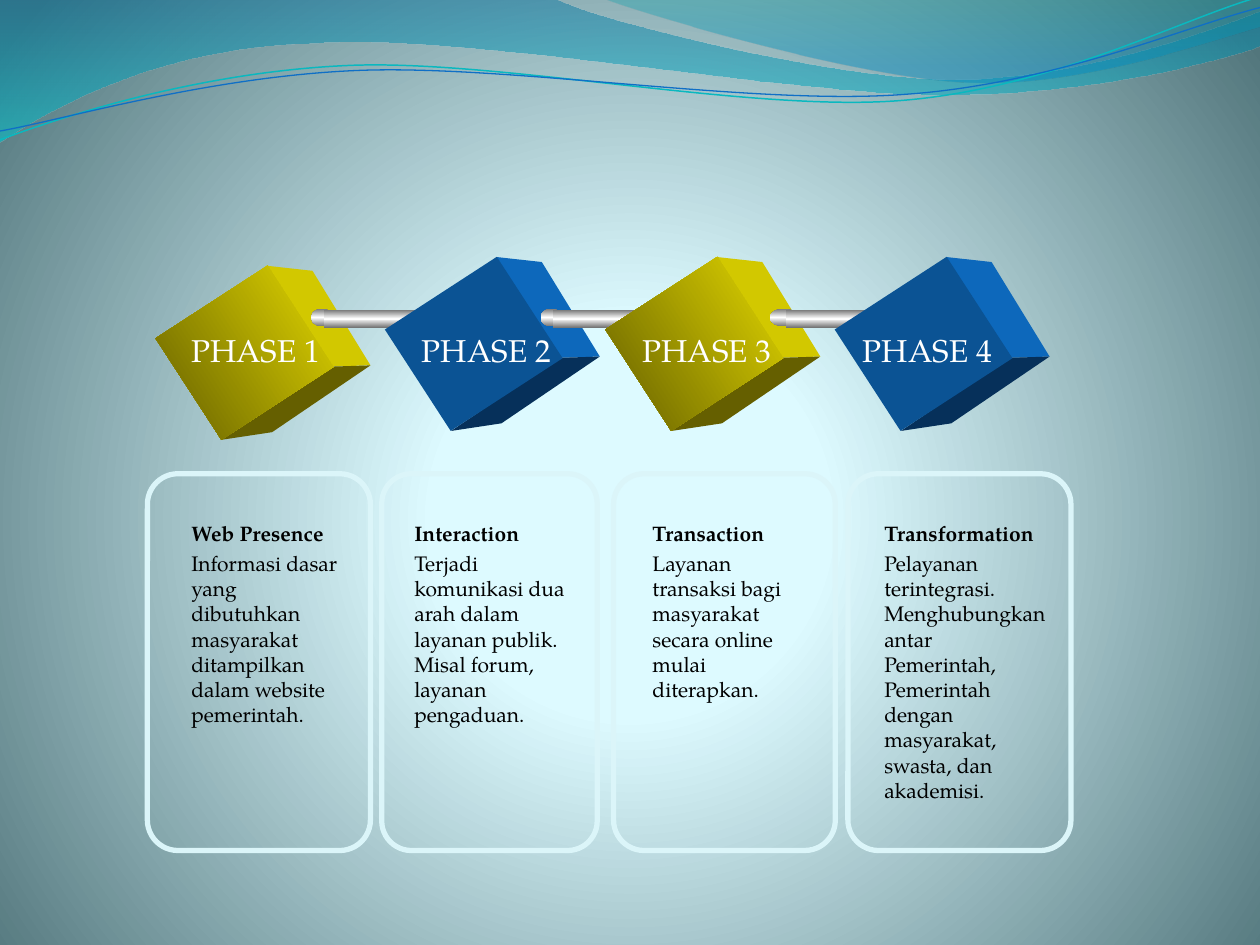
"""Build the slide showing the four phases of e-government services."""
from dataclasses import dataclass

import lxml.etree
import pptx
import pptx.dml.color
import pptx.enum.shapes
import pptx.oxml.ns
import pptx.util
from pptx.util import Inches

FONT = "TeX Gyre Pagella"
SHAPES = pptx.enum.shapes.MSO_SHAPE
COLORS = {"white": "FFFFFF", "black": "000000", "card": "DBF5F9",
          "cyan line": "0AB8BF", "blue line": "0F6FC6"}


@dataclass
class Gradient:
    """Stops of position, colour and opacity, running down or in a circle."""
    stops: list[tuple[int, str, int]]
    circle: tuple[int, ...] = ()


@dataclass
class Cube:
    """Fills of the three visible faces of a cube."""
    front: str | Gradient
    side: str
    bottom: str


@dataclass
class Phase:
    """One phase: its cube, label, card and text column."""
    label: str
    heading: str
    body: str
    cube: Cube
    cube_center: tuple[float, float]
    label_left: float
    card: tuple[float, float]
    text: tuple[float, float, float]


BACKDROP = Gradient([(0, "DEFBFF", 100), (25, "DDFAFF", 100), (100, "52767C", 100)],
                    (10, 110, 10, 100))
METAL = Gradient([(0, "767676", 100), (50, "FFFFFF", 100), (100, "767676", 100)])
SHINE = Gradient([(0, "B6B6B6", 100), (50, "FFFFFF", 100), (100, "B6B6B6", 100)])
YELLOW = Cube(Gradient([(0, "E2D700", 100), (100, "655F00", 100)]), "D2C800", "655F00")
BLUE = Cube("0B5394", "0D68BB", "06305A")
WAVES = [
    ([(0, 0), (4.4, -0.01), (4.76, 0.17, 6.64, 0.63, 7.58, 0.63),
      (8.53, 0.63, 9.58, 0.26, 10, 0.09), (10.01, 0.36),
      (9.83, 0.44, 8.7, 0.76, 7.46, 0.75), (6.22, 0.75, 3.82, 0.28, 2.57, 0.34),
      (1.29, 0.36, 0.46, 0.83, -0.01, 1.13)],
     Gradient([(0, "0074A1", 45), (100, "00C6CF", 55)])),
    ([(4.79, -0.01), (5.09, 0.11, 6.82, 0.62, 7.69, 0.65),
      (8.56, 0.69, 9.61, 0.32, 10, 0.21), (10, 0)],
     Gradient([(0, "00A1A9", 30), (80, "008BBF", 45)])),
]
STRANDS = [
    ([(0, 1.11), (0.48, 0.93, 1.58, 0.57, 2.77, 0.52), (3.95, 0.47, 5.93, 0.89, 7.13, 0.8),
      (8.33, 0.71, 9.38, 0.15, 9.98, -0.02)], "cyan line", 0.85),
    ([(0, 1.04), (0.47, 0.96, 1.64, 0.61, 2.83, 0.56), (4.03, 0.51, 5.97, 0.84, 7.17, 0.75),
      (8.36, 0.67, 9.41, 0.21, 10, 0.06)], "blue line", 0.75),
]
PHASES = [
    Phase("PHASE 1", "Web Presence",
          "Informasi dasar yang dibutuhkan masyarakat ditampilkan dalam website pemerintah.",
          YELLOW, (1.94, 2.8), 1.42, (1.17, 1.77), (1.42, 1.42, 1.96)),
    Phase("PHASE 2", "Interaction",
          "Terjadi komunikasi dua arah dalam layanan publik. Misal forum, layanan pengaduan.",
          BLUE, (3.76, 2.73), 3.25, (3.03, 1.71), (3.19, 1.4, 1.96)),
    Phase("PHASE 3", "Transaction",
          "Layanan transaksi bagi masyarakat secara online mulai diterapkan.",
          YELLOW, (5.51, 2.73), 5, (4.87, 1.76), (5.08, 1.42, 1.76)),
    Phase("PHASE 4", "Transformation",
          "Pelayanan terintegrasi. Menghubungkan antar Pemerintah, Pemerintah dengan "
          "masyarakat, swasta, dan akademisi.",
          BLUE, (7.33, 2.73), 6.75, (6.73, 1.77), (6.92, 1.5, 2.56)),
]
RODS = [(2.47, 1), (4.29, 1), (6.11, 1.3)]


def rgb(value: str):
    """Turn a hex string into a colour."""
    return pptx.dml.color.RGBColor.from_string(value)


def paint(fill, holder, value: str | Gradient) -> None:
    """Fill a shape or background with a colour or a gradient."""
    fill.solid()
    if isinstance(value, str):
        fill.fore_color.rgb = rgb(value)
        return
    name = pptx.oxml.ns.qn
    element = lxml.etree.Element(name("a:gradFill"), rotWithShape="1")
    stops = lxml.etree.SubElement(element, name("a:gsLst"))
    for position, color, opacity in value.stops:
        stop = lxml.etree.SubElement(stops, name("a:gs"), pos=str(position * 1000))
        tint = lxml.etree.SubElement(stop, name("a:srgbClr"), val=color)
        if opacity < 100:
            lxml.etree.SubElement(tint, name("a:alpha"), val=str(opacity * 1000))
    if value.circle:
        direction = lxml.etree.SubElement(element, name("a:path"), {"path": "circle"})
        edges = {side: str(edge * 1000) for side, edge in zip("ltrb", value.circle)}
        lxml.etree.SubElement(direction, name("a:fillToRect"), edges)
    else:
        lxml.etree.SubElement(element, name("a:lin"), ang="5400000", scaled="0")
    holder.replace(holder.find(name("a:solidFill")), element)


def style(shape, fill: str | Gradient | None, line: str | None = None, width: float = 1) -> None:
    """Set fill and line of a shape and drop its shadow."""
    shape.shadow.inherit = False
    if fill is None:
        shape.fill.background()
    else:
        paint(shape.fill, shape.element.spPr, fill)
    if line is None:
        shape.line.fill.background()
    else:
        shape.line.color.rgb = rgb(line)
        shape.line.width = pptx.util.Pt(width)


def add_preset(slide, kind, box: tuple[float, ...]):
    """Add a preset shape with its box in inches."""
    return slide.shapes.add_shape(kind, *map(Inches, box))


def add_outline(slide, outline: list[tuple], close: bool = True):
    """Draw a freeform through points and cubic curves in inches."""
    name = pptx.oxml.ns.qn
    ends = [tuple(map(Inches, segment[-2:])) for segment in outline]
    builder = slide.shapes.build_freeform(*ends[0], scale=1)
    builder.add_line_segments(ends[1:], close=close)
    shape = builder.convert_to_shape()
    lines = list(shape.element.iter(name("a:lnTo")))
    for line, segment in zip(lines, outline[1:]):
        if len(segment) == 6:
            curve = lxml.etree.Element(name("a:cubicBezTo"))
            for x, y in zip(segment[::2], segment[1::2]):
                lxml.etree.SubElement(curve, name("a:pt"), x=str(Inches(x) - shape.left),
                                      y=str(Inches(y) - shape.top))
            line.getparent().replace(line, curve)
    return shape


def add_cube(slide, cube: Cube, center: tuple[float, float]) -> None:
    """Draw a tilted square with the two faces behind it."""
    top, corner, bottom = (0.18, -0.69), (0.68, 0.11), (-0.18, 0.69)
    back_top, back_right, back_bottom = (0.54, -0.65), (1, 0.1), (0.22, 0.63)
    for face, fill in (((top, back_top, back_right, corner), cube.side),
                       ((corner, back_right, back_bottom, bottom), cube.bottom)):
        style(add_outline(slide, [(center[0] + x, center[1] + y) for x, y in face]), fill)
    width, height = 0.96, 1.06
    front = add_preset(slide, SHAPES.RECTANGLE,
                       (center[0] - width / 2, center[1] - height / 2, width, height))
    front.rotation = 57
    style(front, cube.front)


def add_rod(slide, left: float, stretch: float) -> None:
    """Draw a metal rod with a rounded cap at each end."""
    for kind, start, top, width, height, fill, line in (
            (SHAPES.OVAL, 0, 2.45, 0.17, 0.14, METAL, None),
            (SHAPES.RECTANGLE, 0.1, 2.46, 0.82, 0.14, METAL, None),
            (SHAPES.OVAL, 0.84, 2.46, 0.15, 0.13, SHINE, COLORS["white"]),
            (SHAPES.OVAL, 0.92, 2.5, 0.04, 0.04, SHINE, None)):
        box = (left + start * stretch, top, width * stretch, height)
        style(add_preset(slide, kind, box), fill, line)


def add_card(slide, left: float, width: float) -> None:
    """Draw a rounded frame."""
    card = add_preset(slide, SHAPES.ROUNDED_RECTANGLE, (left, 3.76, width, 2.99))
    card.adjustments[0] = 0.137
    style(card, None, COLORS["card"], 3)


def add_text(slide, box: tuple[float, ...], lines: list[tuple[str, bool]], size: float,
             color: str, wrap: bool, space: float = 0) -> None:
    """Write paragraphs of text and weight into a box."""
    frame = slide.shapes.add_textbox(*map(Inches, box)).text_frame
    frame.word_wrap = wrap
    for index, (text, bold) in enumerate(lines):
        paragraph = frame.add_paragraph() if index else frame.paragraphs[0]
        paragraph.space_before = pptx.util.Pt(space)
        run = paragraph.add_run()
        run.text = text
        run.font.name, run.font.size, run.font.bold = FONT, pptx.util.Pt(size), bold
        run.font.color.rgb = rgb(COLORS[color])


def main() -> None:
    """Build and save the presentation."""
    presentation = pptx.Presentation()
    presentation.slide_width, presentation.slide_height = Inches(10), Inches(7.5)
    slide = presentation.slides.add_slide(presentation.slide_layouts[6])
    holder = slide.background.fill
    holder.solid()
    paint(holder, slide.element.find(".//" + pptx.oxml.ns.qn("p:bgPr")), BACKDROP)
    for outline, gradient in WAVES:
        style(add_outline(slide, outline), gradient)
    for outline, color, width in STRANDS:
        style(add_outline(slide, outline, close=False), None, COLORS[color], width)
    for phase in reversed(PHASES):
        add_card(slide, *phase.card)
    for index, phase in enumerate(PHASES):
        add_cube(slide, phase.cube, phase.cube_center)
        if index < len(RODS):
            add_rod(slide, *RODS[index])
    for phase in PHASES:
        add_text(slide, (phase.label_left, 2.58, 1.27, 0.4), [(phase.label, False)],
                 18, "white", False)
    for phase in PHASES:
        left, width, height = phase.text
        add_text(slide, (left, 4.08, width, height),
                 [(phase.heading, True), (phase.body, False)], 12, "black", True, 2.9)
    presentation.save("out.pptx")


if __name__ == "__main__":
    main()
